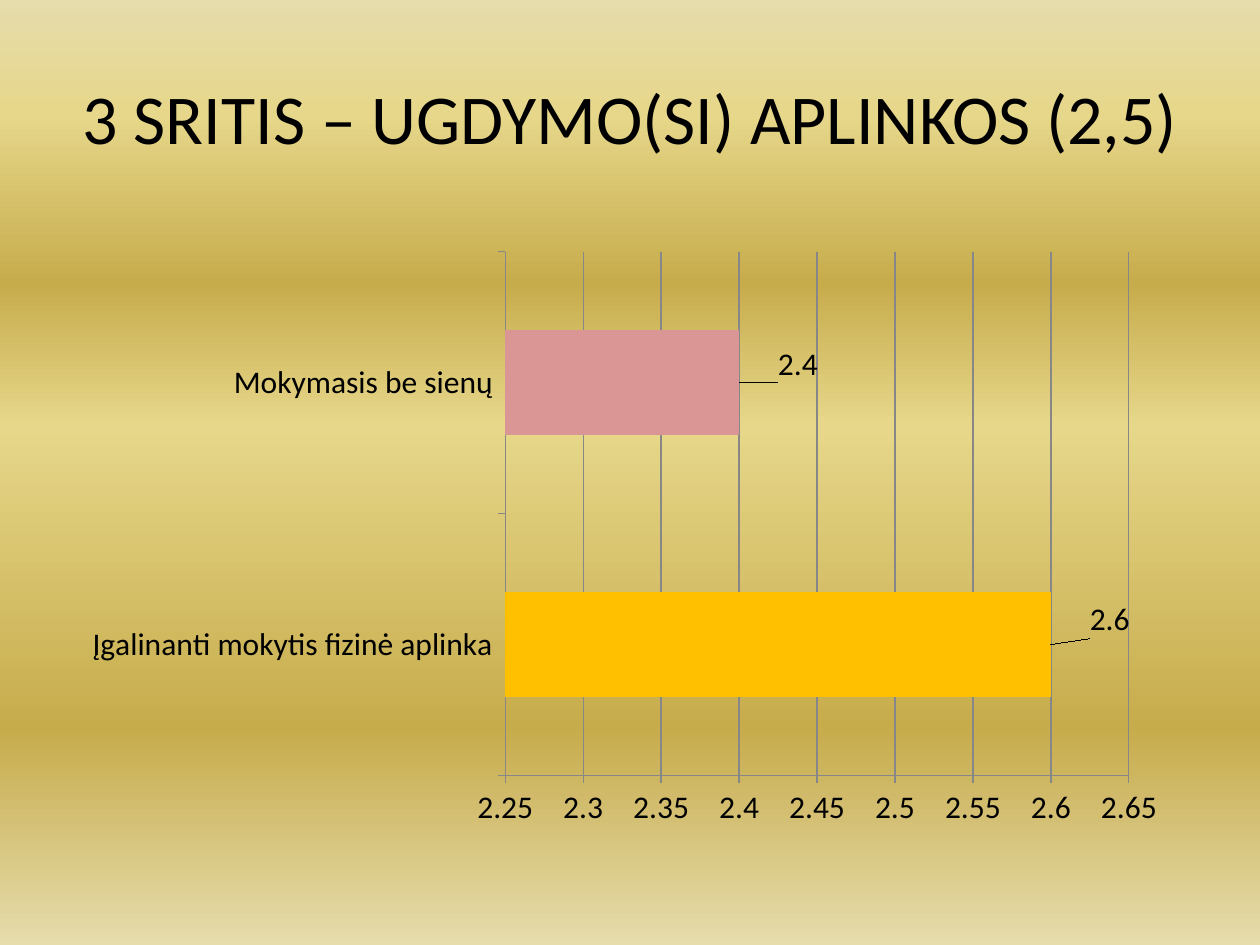
from pptx import Presentation
from pptx.chart.data import CategoryChartData
from pptx.dml.color import RGBColor
from pptx.enum.chart import XL_CHART_TYPE, XL_LABEL_POSITION, XL_TICK_MARK
from pptx.enum.text import MSO_ANCHOR, PP_ALIGN
from pptx.oxml import parse_xml
from pptx.oxml.ns import nsdecls, qn
from pptx.util import Inches, Pt

FONT = "Calibri"
BLACK = RGBColor(0x00, 0x00, 0x00)
GRID_GRAY = RGBColor(0x87, 0x87, 0x87)
SERIES_BLUE = RGBColor(0x4F, 0x81, 0xBD)
AMBER = RGBColor(0xFF, 0xC0, 0x00)
ROSE = RGBColor(0xD9, 0x96, 0x94)
PALE_GOLD = RGBColor(0xE6, 0xDC, 0xAC)
LIGHT_GOLD = RGBColor(0xE6, 0xD7, 0x8A)
DARK_GOLD = RGBColor(0xC7, 0xAC, 0x4C)

GOLD_STOPS = [
    (0, PALE_GOLD), (12, LIGHT_GOLD), (30, DARK_GOLD),
    (45, LIGHT_GOLD), (77, DARK_GOLD), (100, PALE_GOLD),
]
SCORES = [
    ("Įgalinanti mokytis fizinė aplinka", 2.6, AMBER, (0.03, -0.04)),
    ("Mokymasis be sienų", 2.4, ROSE, (0.03, -0.03)),
]


def paint_background(slide):
    fill = slide.background.fill
    fill.gradient()
    fill.gradient_angle = 270
    stop_list = slide.element.find(".//" + qn("a:gsLst"))
    for stop in list(stop_list):
        stop_list.remove(stop)
    for percent, color in GOLD_STOPS:
        stop_list.append(parse_xml(
            f'<a:gs {nsdecls("a")} pos="{percent * 1000}">'
            f'<a:srgbClr val="{color}"/></a:gs>'
        ))


def add_title(slide, left, top, width, height):
    title = slide.shapes.title
    title.left, title.top, title.width, title.height = left, top, width, height
    title.text_frame.vertical_anchor = MSO_ANCHOR.MIDDLE
    paragraph = title.text_frame.paragraphs[0]
    paragraph.alignment = PP_ALIGN.CENTER
    run = paragraph.add_run()
    run.text = "3 SRITIS – UGDYMO(SI) APLINKOS (2,5)"
    run.font.name = FONT
    run.font.size = Pt(40)
    run.font.color.rgb = BLACK


def manual_layout(**values):
    settings = "".join(f'<c:{name} val="{value}"/>' for name, value in values.items())
    return parse_xml(
        f'<c:layout {nsdecls("c")}><c:manualLayout>{settings}'
        f'</c:manualLayout></c:layout>'
    )


def style_line(line):
    line.color.rgb = GRID_GRAY
    line.width = Pt(0.75)


def style_axes(chart):
    for axis in (chart.category_axis, chart.value_axis):
        axis.major_tick_mark = XL_TICK_MARK.OUTSIDE
        axis.minor_tick_mark = XL_TICK_MARK.NONE
        style_line(axis.format.line)
    value_axis = chart.value_axis
    value_axis.minimum_scale = 2.25
    value_axis.maximum_scale = 2.65
    value_axis.major_unit = 0.05
    value_axis.has_major_gridlines = True
    style_line(value_axis.major_gridlines.format.line)


def style_bars(plot):
    plot.gap_width = 150
    plot.vary_by_categories = False
    plot.has_data_labels = True
    plot.data_labels.show_value = True
    series = plot.series[0]
    series.format.fill.solid()
    series.format.fill.fore_color.rgb = SERIES_BLUE
    for index, (_, _, color, _) in enumerate(SCORES):
        point = series.points[index]
        point.format.fill.solid()
        point.format.fill.fore_color.rgb = color
        point.data_label.position = XL_LABEL_POSITION.OUTSIDE_END


def place_chart_parts(chart):
    chart_xml = chart.element
    plot_area = chart_xml.find(".//" + qn("c:plotArea"))
    for layout in plot_area.findall(qn("c:layout")):
        plot_area.remove(layout)
    plot_area.insert(0, manual_layout(
        layoutTarget="inner", xMode="edge", yMode="edge",
        x=0.39, y=0.05, w=0.55, h=0.84,
    ))
    labels = chart_xml.findall(".//" + qn("c:dLbl"))
    for label, (_, _, _, (shift_x, shift_y)) in zip(labels, SCORES):
        label.insert(1, manual_layout(x=shift_x, y=shift_y))


def add_score_chart(slide, left, top, width, height):
    data = CategoryChartData()
    data.categories = [name for name, _, _, _ in SCORES]
    data.add_series("Series 1", [score for _, score, _, _ in SCORES])
    chart = slide.shapes.add_chart(
        XL_CHART_TYPE.BAR_CLUSTERED, left, top, width, height, data
    ).chart
    chart.has_legend = False
    chart.has_title = False
    chart.font.name = FONT
    chart.font.size = Pt(18)
    chart.font.color.rgb = BLACK
    style_axes(chart)
    style_bars(chart.plots[0])
    place_chart_parts(chart)


def main():
    presentation = Presentation()
    presentation.slide_width = Inches(10)
    presentation.slide_height = Inches(7.5)
    slide = presentation.slides.add_slide(presentation.slide_layouts[5])
    paint_background(slide)
    add_title(slide, Inches(0.5), Inches(0.3), Inches(9), Inches(1.25))
    add_score_chart(slide, Inches(0.5), Inches(1.75), Inches(9), Inches(4.95))
    presentation.save("out.pptx")


if __name__ == "__main__":
    main()
